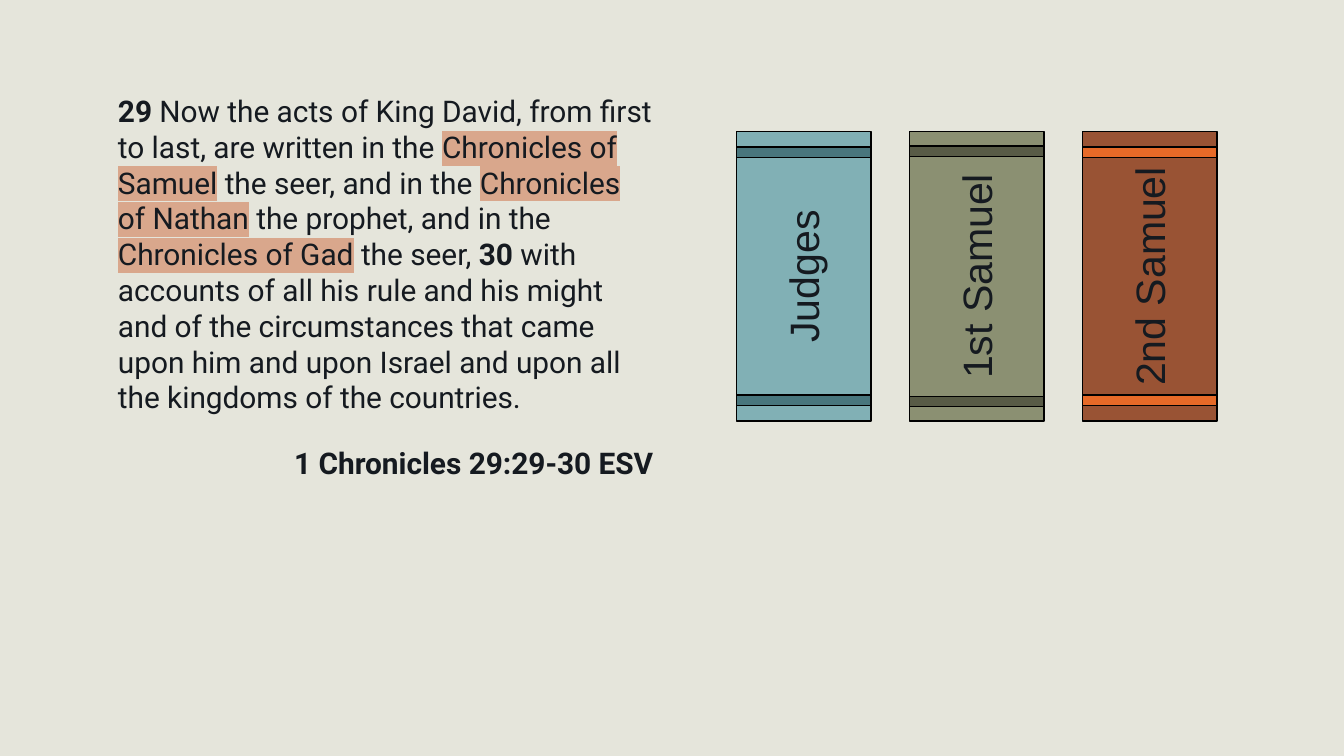
from dataclasses import dataclass

from lxml import etree
from pptx import Presentation
from pptx.dml.color import RGBColor
from pptx.enum.shapes import MSO_SHAPE as Shape
from pptx.enum.text import MSO_ANCHOR as Anchor, PP_ALIGN as Align
from pptx.oxml.ns import qn
from pptx.util import Cm, Pt


@dataclass(frozen=True)
class Theme:
    background: str = "E5E5DB"
    ink: str = "151A20"
    outline: str = "000000"
    highlight: str = "D9A78C"
    body_font: str = "Roboto"
    label_font: str = "Arial"
    body_size: int = 16
    label_size: int = 22
    gap: int = 16


theme = Theme()


def add_text(paragraph, text, font, size, bold=False, highlight=None):
    run = paragraph.add_run()
    run.text = text
    run.font.name = font
    run.font.size = Pt(size)
    run.font.bold = bold
    run.font.color.rgb = RGBColor.from_string(theme.ink)
    if highlight:
        mark = etree.Element(qn("a:highlight"))
        etree.SubElement(mark, qn("a:srgbClr"), val=highlight)
        run.font._element.find(qn("a:solidFill")).addnext(mark)


def add_frame(left, top, width, height, rotation=0):
    box = slide.shapes.add_textbox(Cm(left), Cm(top), Cm(width), Cm(height))
    box.rotation = rotation
    frame = box.text_frame
    frame.word_wrap = True
    frame.vertical_anchor = Anchor.TOP
    frame.margin_left = frame.margin_right = Cm(0.25)
    frame.margin_top = frame.margin_bottom = Cm(0.25)
    return frame


presentation = Presentation()
presentation.slide_width, presentation.slide_height = Cm(25.4), Cm(14.29)
slide = presentation.slides.add_slide(presentation.slide_layouts[6])
slide.background.fill.solid()
slide.background.fill.fore_color.rgb = RGBColor.from_string(theme.background)

# Bible passage: plain, bold and highlighted pieces
bold = {"bold": True}
marked = {"highlight": theme.highlight}
passage = [
    ("29", bold),
    (" Now the acts of King David, from first to last, are written in the ", {}),
    ("Chronicles of Samuel", marked),
    (" the seer, and in the ", {}),
    ("Chronicles of Nathan", marked),
    (" the prophet, and in the ", {}),
    ("Chronicles of Gad", marked),
    (" the seer, ", {}),
    ("30", bold),
    (" with accounts of all his rule and his might and of the circumstances "
     "that came upon him and upon Israel and upon all the kingdoms of the "
     "countries.", {}),
]
frame = add_frame(1.98, 1.5, 10.62, 9.96)
for text, style in passage:
    add_text(frame.paragraphs[0], text, theme.body_font, theme.body_size, **style)

# Citation
citation = frame.add_paragraph()
citation.alignment = Align.RIGHT
citation.space_before = citation.space_after = Pt(theme.gap)
add_text(citation, "1 Chronicles 29:29-30 ESV", theme.body_font, theme.body_size, bold=True)

# Books: title, cover colour, band colour, band distance from the edge, label length
books = [
    ("Judges", "81B0B5", "49767D", 0.29, 4.06),
    ("1st Samuel", "8B9072", "585B46", 0.27, 6.02),
    ("2nd Samuel", "995334", "E76A28", 0.29, 6.02),
]
first_left, book_top, pitch = 13.92, 2.49, 3.27
book_width, book_height, band_height, label_height = 2.54, 5.47, 0.2, 1.47

for index, (title, cover, band, inset, label_length) in enumerate(books):
    left = first_left + index * pitch
    lower_band = book_top + book_height - inset - band_height
    group = slide.shapes.add_group_shape()
    for top, height, colour in [
        (book_top, book_height, cover),
        (book_top + inset, band_height, band),
        (lower_band, band_height, band),
    ]:
        shape = group.shapes.add_shape(
            Shape.RECTANGLE, Cm(left), Cm(top), Cm(book_width), Cm(height))
        shape.shadow.inherit = False
        shape.fill.solid()
        shape.fill.fore_color.rgb = RGBColor.from_string(colour)
        shape.line.color.rgb = RGBColor.from_string(theme.outline)
        shape.line.width = Pt(0.75)

    # Title turned to read upwards, centred on the book
    frame = add_frame(left + (book_width - label_length) / 2,
                      book_top + (book_height - label_height) / 2,
                      label_length, label_height, rotation=270)
    label = frame.paragraphs[0]
    label.alignment = Align.CENTER
    label.space_after = Pt(theme.gap)
    add_text(label, title, theme.label_font, theme.label_size)

presentation.save("out.pptx")
